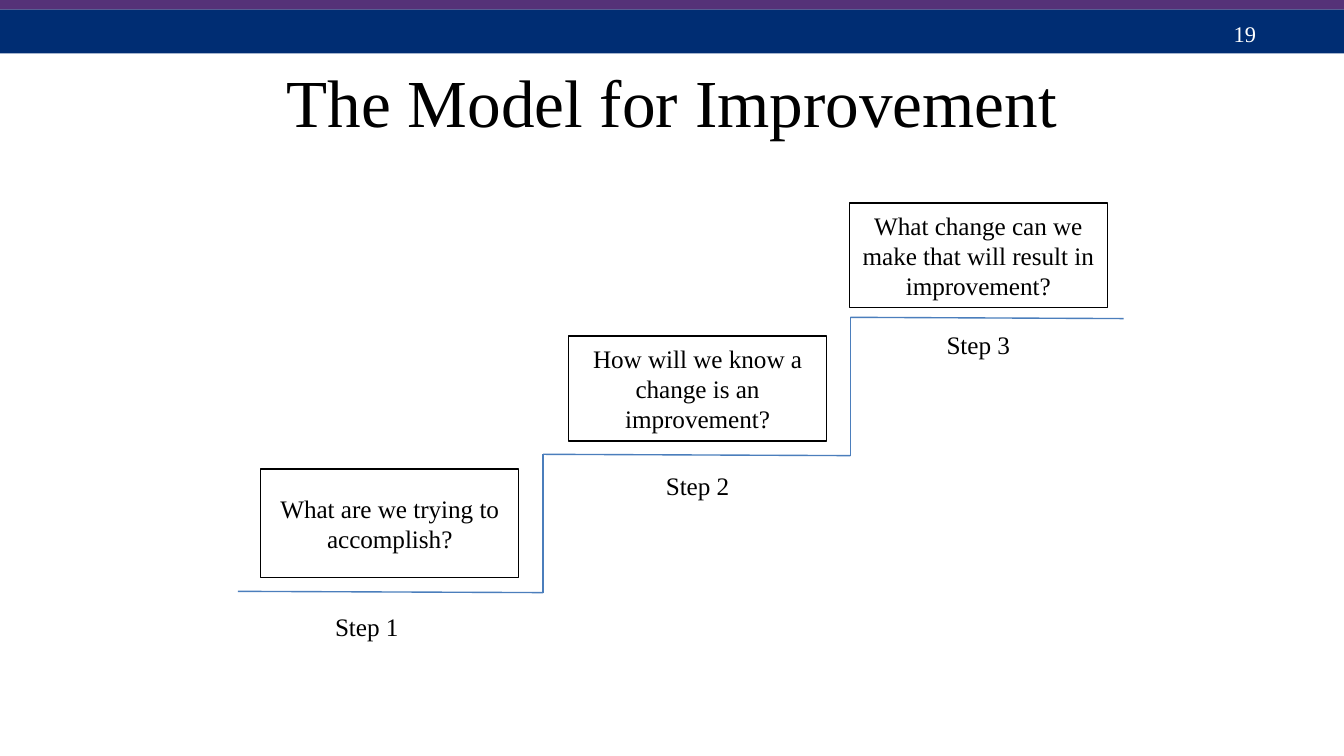
from dataclasses import dataclass

from lxml import etree
from pptx import Presentation
from pptx.dml.color import RGBColor
from pptx.enum import shapes, text
from pptx.oxml.ns import qn
from pptx.util import Pt


@dataclass(frozen=True)
class Theme:
    font: str = "Times New Roman"
    navy: str = "002D73"
    purple: str = "553278"
    black: str = "000000"
    white: str = "FFFFFF"
    stair: str = "4B7EBC"
    title_size: float = 36
    body_size: float = 13.5
    number_size: float = 12
    line_width: float = 0.75


class SlideBuilder:
    def __init__(self, slide, theme):
        self.slide = slide
        self.theme = theme

    def set_text(self, shape, words, size, color, align, anchor):
        frame = shape.text_frame
        frame.word_wrap = True
        frame.vertical_anchor = anchor
        paragraph = frame.paragraphs[0]
        paragraph.alignment = align
        run = paragraph.add_run()
        run.text = words
        run.font.name = self.theme.font
        run.font.size = Pt(size)
        run.font.color.rgb = RGBColor.from_string(color)

    def title(self, words, left, top, width, height):
        shape = self.slide.shapes.title
        shape.left, shape.top = Pt(left), Pt(top)
        shape.width, shape.height = Pt(width), Pt(height)
        self.set_text(shape, words, self.theme.title_size, self.theme.black,
                      text.PP_ALIGN.CENTER, text.MSO_ANCHOR.MIDDLE)

    def rectangle(self, left, top, width, height):
        shape = self.slide.shapes.add_shape(
            shapes.MSO_SHAPE.RECTANGLE, Pt(left), Pt(top), Pt(width), Pt(height))
        shape.shadow.inherit = False
        return shape

    def band(self, top, height, color):
        shape = self.rectangle(0, top, 720, height)
        shape.fill.solid()
        shape.fill.fore_color.rgb = RGBColor.from_string(color)
        shape.line.fill.background()

    def question(self, words, left, top, width, height):
        shape = self.rectangle(left, top, width, height)
        shape.fill.background()
        shape.line.color.rgb = RGBColor.from_string(self.theme.black)
        shape.line.width = Pt(self.theme.line_width)
        self.set_text(shape, words, self.theme.body_size, self.theme.black,
                      text.PP_ALIGN.CENTER, text.MSO_ANCHOR.MIDDLE)

    def label(self, words, left, top, width, height, size, color, align):
        shape = self.slide.shapes.add_textbox(Pt(left), Pt(top), Pt(width), Pt(height))
        self.set_text(shape, words, size, color, align, text.MSO_ANCHOR.TOP)

    def line(self, start_x, start_y, end_x, end_y):
        connector = self.slide.shapes.add_connector(
            shapes.MSO_CONNECTOR.STRAIGHT,
            Pt(start_x), Pt(start_y), Pt(end_x), Pt(end_y))
        connector.line.color.rgb = RGBColor.from_string(self.theme.stair)
        connector.line.width = Pt(self.theme.line_width)
        etree.SubElement(connector._element.spPr, qn("a:effectLst"))


def main():
    presentation = Presentation()
    presentation.slide_width, presentation.slide_height = Pt(720), Pt(405)
    theme = Theme()
    slide = presentation.slides.add_slide(presentation.slide_layouts[5])
    builder = SlideBuilder(slide, theme)

    builder.band(5, 23.6, theme.navy)
    builder.label("19", 653.8, 7.2, 54, 21.6, theme.number_size, theme.white,
                  text.PP_ALIGN.LEFT)
    builder.band(-1.4, 6.4, theme.purple)
    builder.title("The Model for Improvement", 36, 20.2, 648, 67.7)

    steps = [
        ("What are we trying to accomplish?", 139.7, 127.4, 58.2),
        ("How will we know a change is an improvement?", 304.6, 304.6, 56.2),
        ("What change can we make that will result in improvement?", 455, 455, 56.2),
    ]
    edges = [127.4, 291, 455.5, 602]
    step_width, slant = 138.2, 0.7
    tread_rise, box_rise, label_rise = 73.4, 71.3, 75.6

    for index, (question, box_left, label_left, height) in enumerate(steps):
        tread = 316.8 - index * tread_rise
        builder.question(question, box_left, 251.3 - index * box_rise, step_width, height)
        builder.line(edges[index], tread, edges[index + 1], tread + slant)
        if index:
            builder.line(edges[index], tread, edges[index], tread + tread_rise + slant)
        builder.label(f"Step {index + 1}", label_left, 324 - index * label_rise,
                      step_width, 23.8, theme.body_size, theme.black,
                      text.PP_ALIGN.CENTER)

    presentation.save("out.pptx")


if __name__ == "__main__":
    main()
